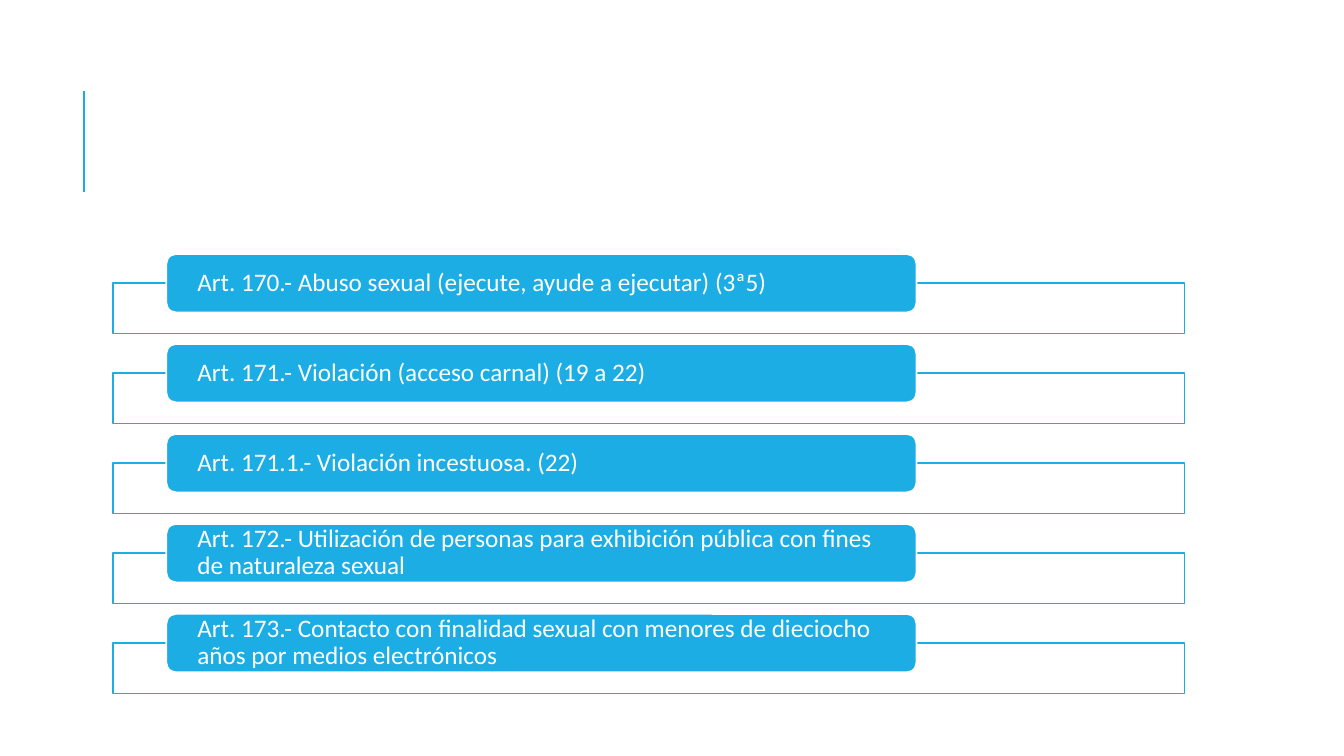
from lxml import etree
from pptx import Presentation
from pptx.dml.color import RGBColor
from pptx.enum.shapes import MSO_CONNECTOR, MSO_SHAPE
from pptx.enum.text import MSO_ANCHOR, PP_ALIGN
from pptx.oxml.ns import qn
from pptx.util import Inches, Pt

BLUE = "1CADE4"
WHITE = "FFFFFF"
FIRST_TOP, LAST_TOP = 2.81, 6.38
ARTICLES = [
    "Art. 170.- Abuso sexual (ejecute, ayude a ejecutar) (3ª5)",
    "Art. 171.- Violación (acceso carnal) (19 a 22)",
    "Art. 171.1.- Violación incestuosa. (22)",
    "Art. 172.- Utilización de personas para exhibición pública con fines de naturaleza sexual",
    "Art. 173.- Contacto con finalidad sexual con menores de dieciocho años por medios electrónicos",
]


def rgb(color):
    return RGBColor.from_string(color)


def add_box(s, kind, x, y, w, h, fill, line):
    sp = s.shapes.add_shape(kind, Inches(x), Inches(y), Inches(w), Inches(h))
    sp.shadow.inherit = False
    sp.fill.solid()
    sp.fill.fore_color.rgb = rgb(fill)
    sp.line.color.rgb = rgb(line)
    sp.line.width = Pt(1.25)
    return sp


def set_opacity(sp, percent):
    color = sp._element.spPr.find(qn("a:solidFill")).find(qn("a:srgbClr"))
    etree.SubElement(color, qn("a:alpha")).set("val", str(percent * 1000))


def add_frame(s, top):
    sp = add_box(s, MSO_SHAPE.RECTANGLE, 1.12, top, 10.63, 0.5, WHITE, BLUE)
    set_opacity(sp, 90)


def add_label(s, top, text):
    sp = add_box(s, MSO_SHAPE.ROUNDED_RECTANGLE, 1.65, top, 7.44, 0.58, BLUE, WHITE)
    tf = sp.text_frame
    tf.word_wrap = True
    tf.vertical_anchor = MSO_ANCHOR.MIDDLE
    tf.margin_left = tf.margin_right = Inches(0.28)
    tf.margin_top = tf.margin_bottom = 0
    p = tf.paragraphs[0]
    p.alignment = PP_ALIGN.LEFT
    p.line_spacing = 0.9
    r = p.add_run()
    r.text = text
    r.font.name = "Calibri"
    r.font.size = Pt(18)
    r.font.color.rgb = rgb(WHITE)


def add_rule(s, x, y1, y2):
    line = s.shapes.add_connector(
        MSO_CONNECTOR.STRAIGHT, Inches(x), Inches(y1), Inches(x), Inches(y2))
    line.line.color.rgb = rgb(BLUE)
    line.line.width = Pt(1.5)
    etree.SubElement(line._element.spPr, qn("a:effectLst"))


def main():
    prs = Presentation()
    prs.slide_width = Inches(13.33)
    prs.slide_height = Inches(7.5)
    s = prs.slides.add_slide(prs.slide_layouts[6])
    add_rule(s, 0.83, 1.9, 0.9)
    pitch = (LAST_TOP - FIRST_TOP) / (len(ARTICLES) - 1)
    for i, article in enumerate(ARTICLES):
        top = FIRST_TOP + i * pitch
        add_frame(s, top)
        add_label(s, top - 0.29, article)
    prs.save("out.pptx")


if __name__ == "__main__":
    main()
